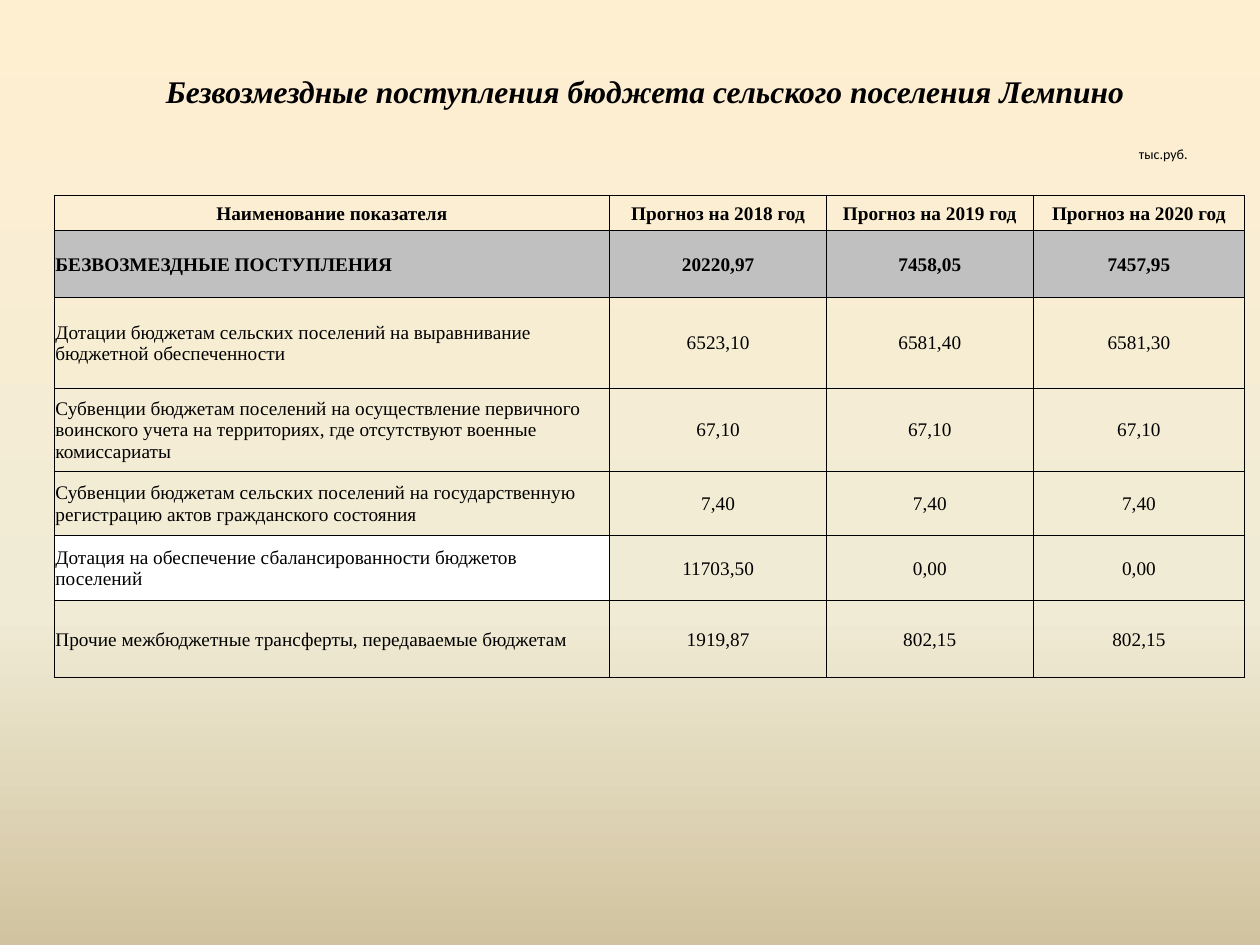
from dataclasses import dataclass

from lxml import etree
from pptx import Presentation
from pptx.dml.color import RGBColor
from pptx.enum.text import MSO_ANCHOR, MSO_AUTO_SIZE, PP_ALIGN
from pptx.oxml.ns import qn
from pptx.util import Inches, Pt

LEFT, CENTER = PP_ALIGN.LEFT, PP_ALIGN.CENTER
MIDDLE = MSO_ANCHOR.MIDDLE
FIT_SHAPE = MSO_AUTO_SIZE.SHAPE_TO_FIT_TEXT
TITLE_ONLY = 5
SERIF, SANS = "Times New Roman", "Calibri"
BLACK, GRAY, WHITE = "000000", "C0C0C0", "FFFFFF"
BACKGROUND_STOPS = ((0, "FFEFD1"), (65, "F0EBD5"), (100, "D1C39F"))
COLUMN_WIDTHS = (4.41, 1.72, 1.64, 1.68)


@dataclass
class BudgetRow:
    height: float
    name: str
    values: tuple[str, ...]
    bold: bool = False
    name_fill: str | None = None
    value_fill: str | None = None
    name_alignment: PP_ALIGN = LEFT


ROWS = (
    BudgetRow(0.28, "Наименование показателя",
              tuple(f"Прогноз на {year} год" for year in (2018, 2019, 2020)),
              bold=True, name_alignment=CENTER),
    BudgetRow(0.53, "БЕЗВОЗМЕЗДНЫЕ ПОСТУПЛЕНИЯ", ("20220,97", "7458,05", "7457,95"),
              bold=True, name_fill=GRAY, value_fill=GRAY),
    BudgetRow(0.72, "Дотации бюджетам сельских поселений на выравнивание "
              "бюджетной обеспеченности", ("6523,10", "6581,40", "6581,30")),
    BudgetRow(0.66, "Субвенции бюджетам поселений на осуществление первичного "
              "воинского учета на территориях, где отсутствуют военные комиссариаты",
              ("67,10",) * 3),
    BudgetRow(0.51, "Субвенции бюджетам сельских поселений на государственную "
              "регистрацию актов гражданского состояния", ("7,40",) * 3),
    BudgetRow(0.52, "Дотация на обеспечение сбалансированности бюджетов поселений",
              ("11703,50", "0,00", "0,00"), name_fill=WHITE),
    BudgetRow(0.61, "Прочие межбюджетные трансферты, передаваемые бюджетам",
              ("1919,87", "802,15", "802,15")),
)


def color(value: str) -> RGBColor:
    return RGBColor.from_string(value)


def write(text_frame, text: str, size: float, font_name: str = SERIF,
          bold: bool = False, italic: bool = False, alignment=LEFT) -> None:
    paragraph = text_frame.paragraphs[0]
    paragraph.text = text
    paragraph.alignment = alignment
    font = paragraph.font
    font.size, font.name = Pt(size), font_name
    font.bold, font.italic = bold, italic
    font.color.rgb = color(BLACK)


def place(shape, left: float, top: float, width: float, height: float) -> None:
    shape.left, shape.top = Inches(left), Inches(top)
    shape.width, shape.height = Inches(width), Inches(height)


def paint_background(slide) -> None:
    fill = slide.background.fill
    fill.gradient()
    fill.gradient_angle = 270
    stops = next(slide.element.iter(qn("a:gsLst")))
    for old_stop in list(stops):
        stops.remove(old_stop)
    for percent, value in BACKGROUND_STOPS:
        stop = etree.SubElement(stops, qn("a:gs"), pos=str(percent * 1000))
        etree.SubElement(stop, qn("a:srgbClr"), val=value)


def add_borders(cell, width: float = 0.5) -> None:
    properties = cell._tc.get_or_add_tcPr()
    for side in ("lnL", "lnR", "lnT", "lnB"):
        line = etree.SubElement(properties, qn(f"a:{side}"), w=str(Pt(width)))
        line_fill = etree.SubElement(line, qn("a:solidFill"))
        etree.SubElement(line_fill, qn("a:srgbClr"), val=BLACK)


def fill_cell(cell, text: str, bold: bool, alignment, fill: str | None) -> None:
    cell.margin_left = cell.margin_right = cell.margin_top = Inches(0.01)
    cell.margin_bottom = 0
    cell.vertical_anchor = MIDDLE
    write(cell.text_frame, text, 11, bold=bold, alignment=alignment)
    add_borders(cell)
    if fill:
        cell.fill.solid()
        cell.fill.fore_color.rgb = color(fill)
    else:
        cell.fill.background()


def add_budget_table(slide, left: float, top: float) -> None:
    height = sum(row.height for row in ROWS)
    table = slide.shapes.add_table(
        len(ROWS), len(COLUMN_WIDTHS), Inches(left), Inches(top),
        Inches(sum(COLUMN_WIDTHS)), Inches(height)).table
    table.first_row = table.horz_banding = False
    for column, width in zip(table.columns, COLUMN_WIDTHS):
        column.width = Inches(width)
    for index, row in enumerate(ROWS):
        table.rows[index].height = Inches(row.height)
        fill_cell(table.cell(index, 0), row.name, row.bold,
                  row.name_alignment, row.name_fill)
        for column_index, value in enumerate(row.values, start=1):
            fill_cell(table.cell(index, column_index), value, row.bold,
                      CENTER, row.value_fill)


def main() -> None:
    presentation = Presentation()
    presentation.slide_width, presentation.slide_height = Inches(10), Inches(7.5)
    slide = presentation.slides.add_slide(presentation.slide_layouts[TITLE_ONLY])
    paint_background(slide)

    # Title
    title = slide.shapes.title
    place(title, 0.59, 0.52, 9.06, 0.4)
    title.text_frame.auto_size = FIT_SHAPE
    write(title.text_frame, "Безвозмездные поступления бюджета сельского поселения Лемпино",
          18, bold=True, italic=True, alignment=CENTER)

    # Budget figures
    add_budget_table(slide, 0.43, 1.55)

    # Unit of measure
    unit = slide.shapes.add_textbox(0, 0, 0, 0)
    place(unit, 8.94, 1.11, 0.59, 0.24)
    unit.text_frame.word_wrap = False
    unit.text_frame.auto_size = FIT_SHAPE
    write(unit.text_frame, "тыс.руб.", 8, SANS)

    presentation.save("out.pptx")


if __name__ == "__main__":
    main()
